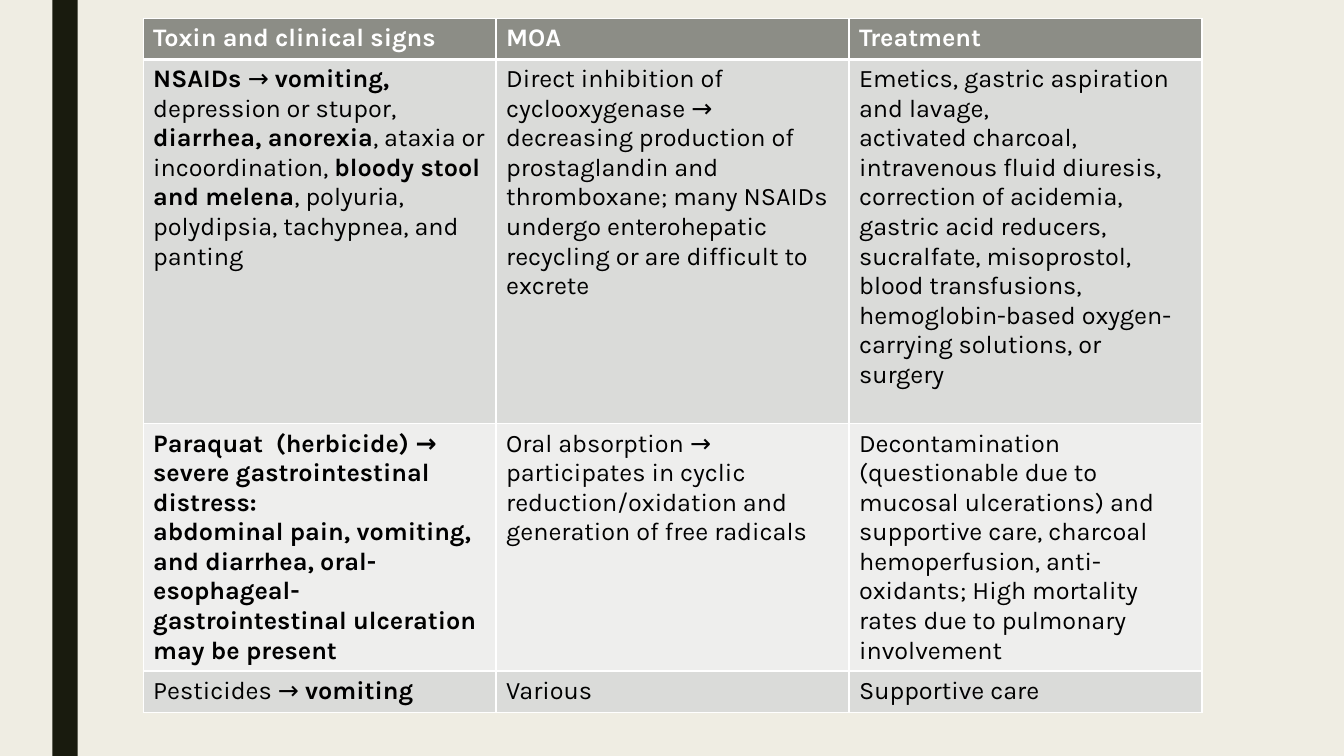
from dataclasses import dataclass

from lxml import etree
from pptx import Presentation
from pptx.dml.color import RGBColor
from pptx.enum.shapes import MSO_SHAPE
from pptx.oxml.ns import qn
from pptx.util import Inches, Pt

RECTANGLE = MSO_SHAPE.RECTANGLE


@dataclass(frozen=True)
class Theme:
    font: str = "Karla"
    text_size: float = 18
    background: str = "EFEDE3"
    bar: str = "191B0E"
    header: str = "8C8D86"
    bands: tuple[str, str] = ("DADBD9", "EEEEED")
    header_text: str = "FFFFFF"
    body_text: str = "000000"
    rule: str = "FFFFFF"
    thin: float = 1
    thick: float = 3


@dataclass(frozen=True)
class Span:
    text: str
    bold: bool = False


@dataclass(frozen=True)
class Row:
    height: float  # percent of the slide height
    cells: tuple[tuple[tuple[Span, ...], ...], ...]  # cells > paragraphs > spans


THEME = Theme()
WIDTH, HEIGHT = Inches(13.33), Inches(7.5)

# Percent of the slide's width or height
BAR_LEFT, BAR_WIDTH = 3.9, 1.88
TABLE_LEFT, TABLE_TOP, COLUMN_WIDTH = 10.65, 2.4, 26.26


def bold(text: str) -> Span:
    return Span(text, True)


def lines(*texts: str, strong: bool = False) -> tuple[tuple[Span, ...], ...]:
    """One single-span paragraph for each text."""
    return tuple((Span(text, strong),) for text in texts)


ROWS = (
    Row(5.47, tuple(lines(title, strong=True) for title in
                    ("Toxin and clinical signs", "MOA", "Treatment"))),
    Row(48.2, (
        ((bold("NSAIDs "), Span("→ "), bold("vomiting, "),
          Span("depression or stupor, "), bold("diarrhea, anorexia"),
          Span(", ataxia or incoordination, "), bold("bloody stool and melena"),
          Span(", polyuria, polydipsia, tachypnea, and panting")),),
        lines("Direct inhibition of cyclooxygenase → decreasing production of "
              "prostaglandin and thromboxane; many NSAIDs undergo enterohepatic "
              "recycling or are difficult to excrete"),
        lines("Emetics, gastric aspiration and lavage,",
              "activated charcoal, intravenous fluid diuresis, correction of "
              "acidemia, gastric acid reducers, sucralfate, misoprostol, blood "
              "transfusions, hemoglobin-based oxygen- carrying solutions, or surgery"),
    )),
    Row(32.7, (
        lines("Paraquat  (herbicide) → severe gastrointestinal distress:",
              "abdominal pain, vomiting, and diarrhea, "
              "oral-esophageal-gastrointestinal ulceration",
              "may be present", strong=True),
        lines("Oral absorption → participates in cyclic reduction/oxidation and "
              "generation of free radicals"),
        lines("Decontamination (questionable due to mucosal ulcerations) and "
              "supportive care, charcoal hemoperfusion, anti-oxidants; High "
              "mortality rates due to pulmonary involvement"),
    )),
    Row(5.47, (
        ((Span("Pesticides → "), bold("vomiting")),),
        lines("Various"),
        lines("Supportive care"),
    )),
)


def across(percent: float) -> int:
    return round(WIDTH * percent / 100)


def down(percent: float) -> int:
    return round(HEIGHT * percent / 100)


def color(code: str) -> RGBColor:
    return RGBColor.from_string(code)


def draw_borders(cell, top: float, bottom: float) -> None:
    """Rule all four sides; must run before the cell is filled."""
    properties = cell._tc.get_or_add_tcPr()
    sides = {"a:lnL": THEME.thin, "a:lnR": THEME.thin, "a:lnT": top, "a:lnB": bottom}
    for tag, points in sides.items():
        line = etree.SubElement(properties, qn(tag), w=str(Pt(points)))
        fill = etree.SubElement(line, qn("a:solidFill"))
        etree.SubElement(fill, qn("a:srgbClr"), val=THEME.rule)


def write_cell(cell, paragraphs: tuple[tuple[Span, ...], ...], text_color: str) -> None:
    frame = cell.text_frame
    for index, spans in enumerate(paragraphs):
        para = frame.add_paragraph() if index else frame.paragraphs[0]
        for span in spans:
            run = para.add_run()
            run.text = span.text
            run.font.name = THEME.font
            run.font.size = Pt(THEME.text_size)
            run.font.bold = span.bold
            run.font.color.rgb = color(text_color)


def draw_bar(page) -> None:
    bar = page.shapes.add_shape(RECTANGLE, across(BAR_LEFT), 0, across(BAR_WIDTH), HEIGHT)
    bar.shadow.inherit = False
    bar.fill.solid()
    bar.fill.fore_color.rgb = color(THEME.bar)
    bar.line.fill.background()


def draw_table(page, rows: tuple[Row, ...]) -> None:
    count = len(rows[0].cells)
    table = page.shapes.add_table(
        len(rows), count, across(TABLE_LEFT), down(TABLE_TOP),
        across(COLUMN_WIDTH * count), down(sum(row.height for row in rows))).table
    table.horz_banding = False
    for column in table.columns:
        column.width = across(COLUMN_WIDTH)
    for index, row in enumerate(rows):
        table.rows[index].height = down(row.height)
        is_header = index == 0
        fill = THEME.header if is_header else THEME.bands[(index - 1) % 2]
        text_color = THEME.header_text if is_header else THEME.body_text
        top = THEME.thick if index == 1 else THEME.thin
        bottom = THEME.thick if is_header else THEME.thin
        for column, paragraphs in enumerate(row.cells):
            cell = table.cell(index, column)
            draw_borders(cell, top, bottom)
            cell.fill.solid()
            cell.fill.fore_color.rgb = color(fill)
            write_cell(cell, paragraphs, text_color)


def main() -> None:
    deck = Presentation()
    deck.slide_width, deck.slide_height = WIDTH, HEIGHT
    page = deck.slides.add_slide(deck.slide_layouts[6])
    page.background.fill.solid()
    page.background.fill.fore_color.rgb = color(THEME.background)
    draw_bar(page)
    draw_table(page, ROWS)
    deck.save("out.pptx")


if __name__ == "__main__":
    main()
